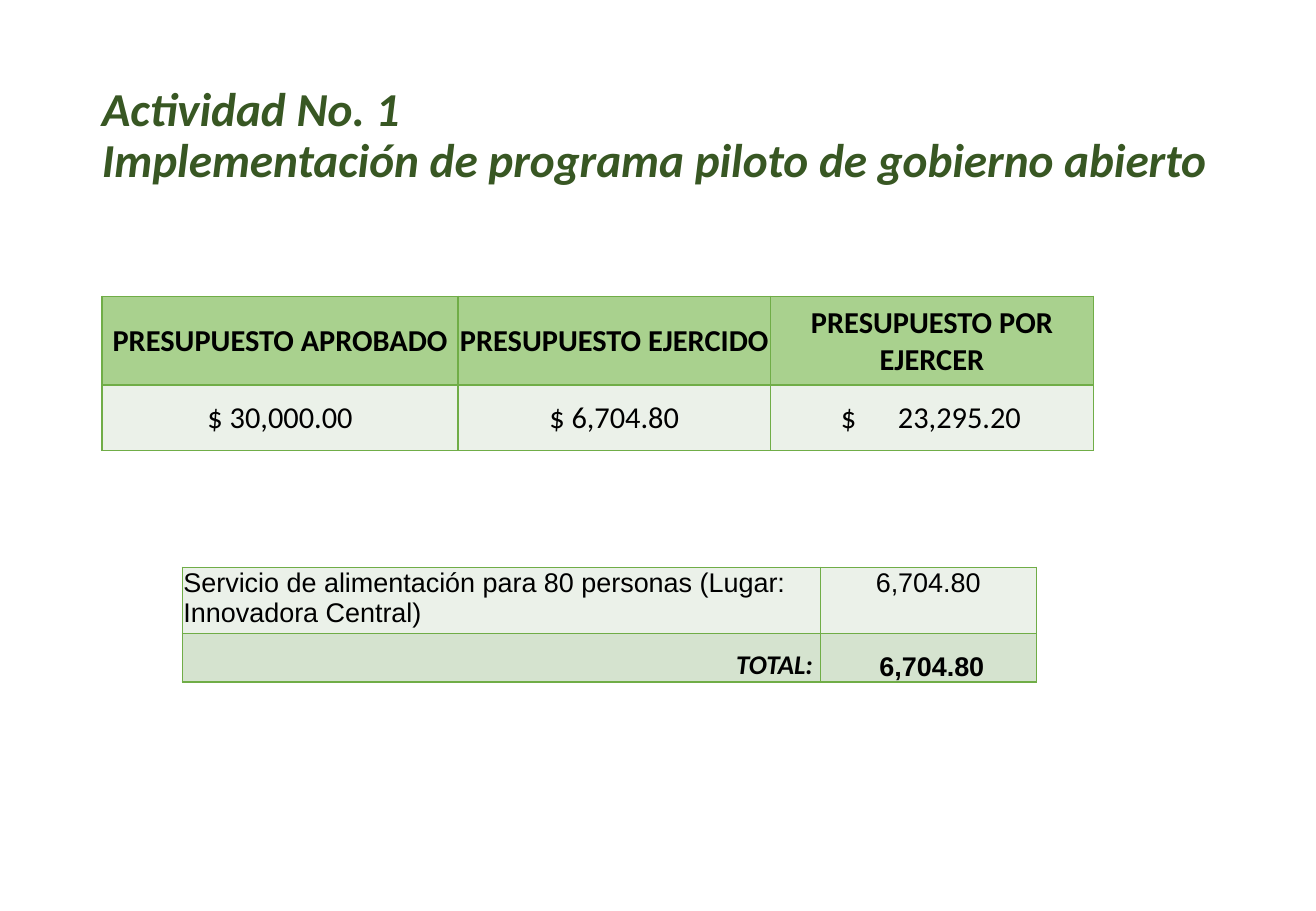
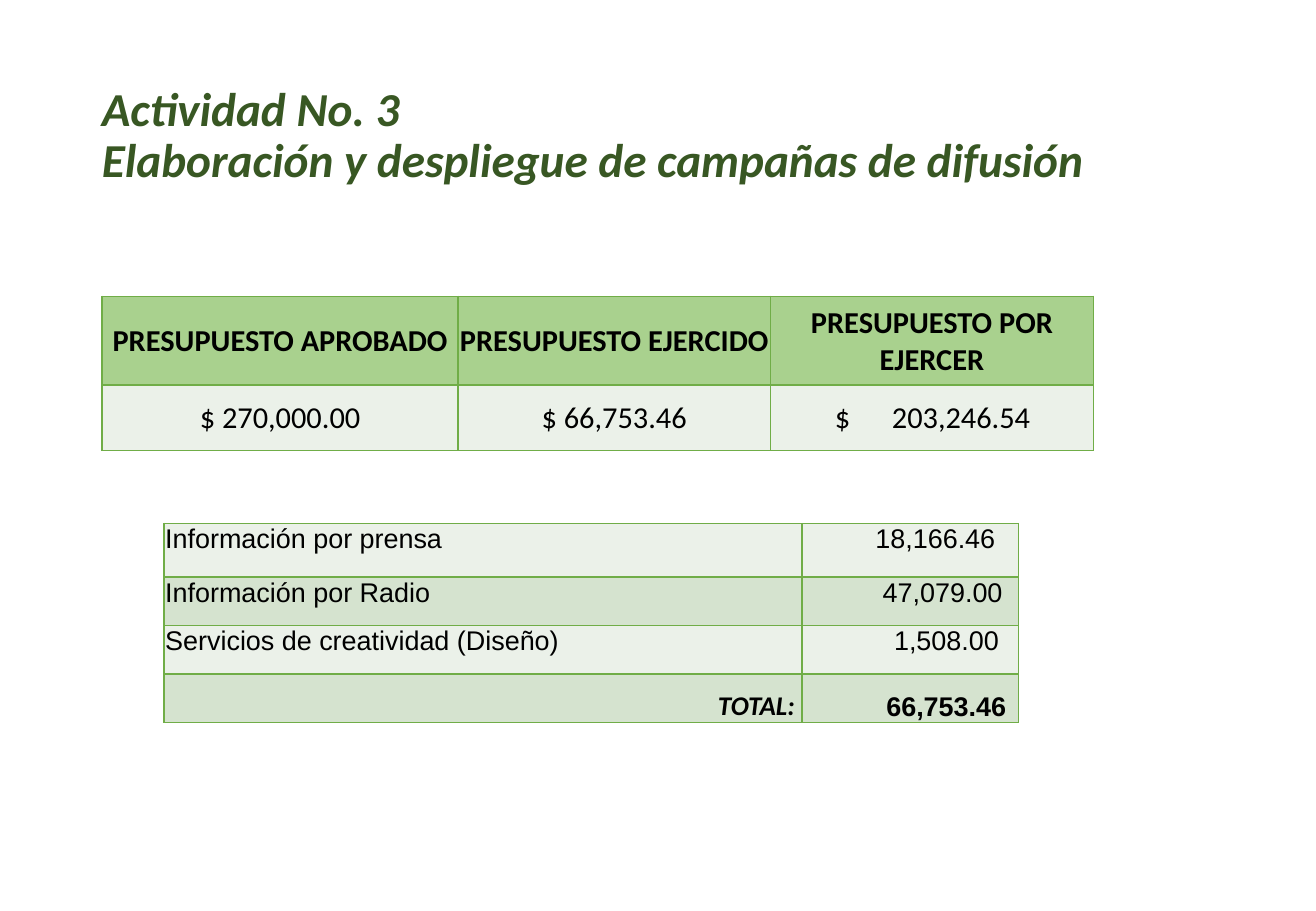
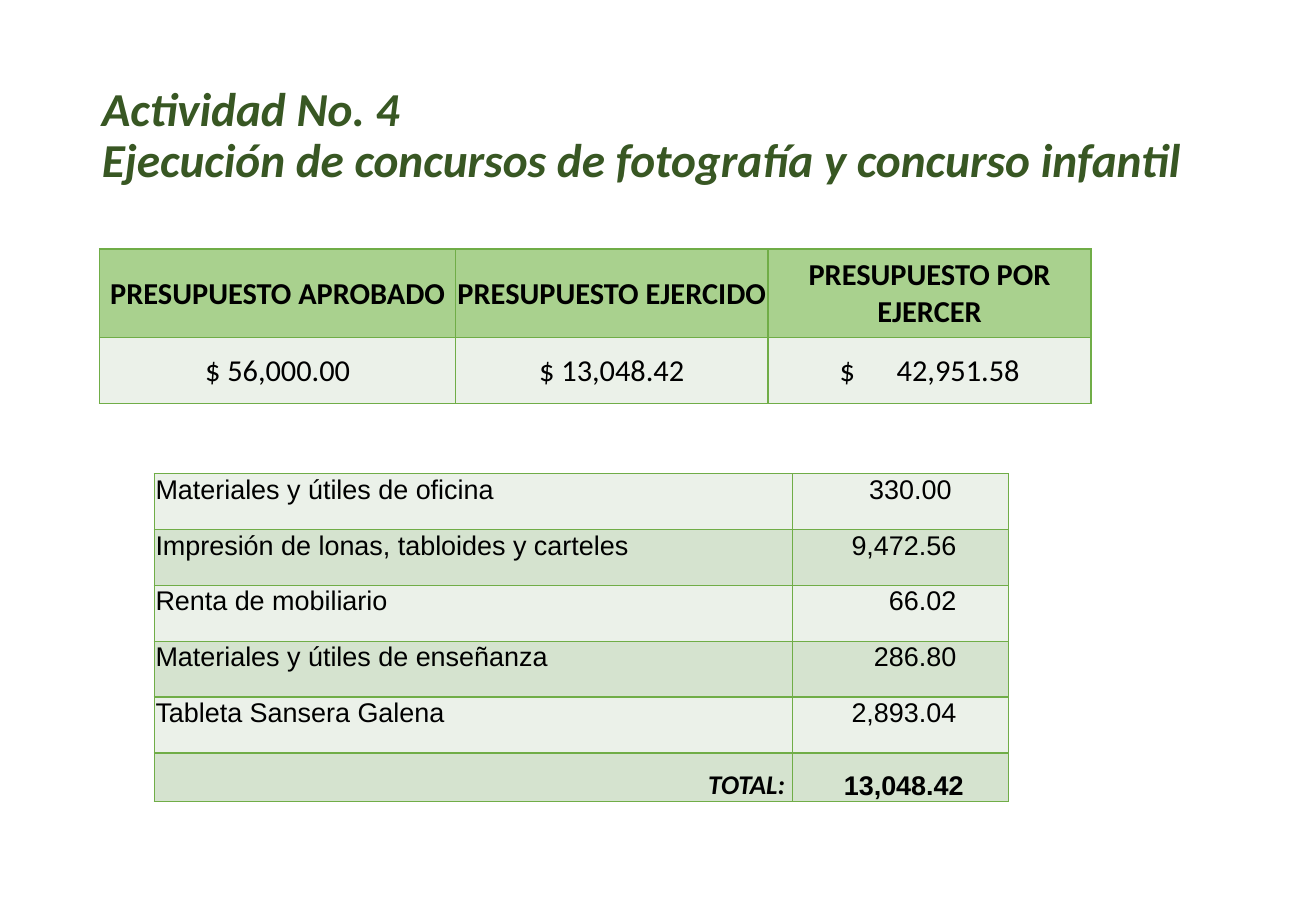
from lxml.etree import SubElement
from pptx import Presentation
from pptx.dml.color import RGBColor
from pptx.enum.text import MSO_ANCHOR as ANCHOR, PP_ALIGN as ALIGN
from pptx.oxml.ns import qn
from pptx.util import Emu, Pt

PX = 9144
COLORS = {
    "title": "385723",
    "text": "000000",
    "border": "70AD47",
    "header": "A9D18E",
    "light": "EBF1E9",
    "tinted": "D5E3CF",
}
INSET = 1
BUDGET_HEADERS = ["PRESUPUESTO APROBADO", "PRESUPUESTO EJERCIDO", "PRESUPUESTO POR EJERCER"]
BUDGET_COLUMNS = [293, 257, 266]
BUDGET_ROWS = [73, 54]
DETAIL_COLUMNS = [525, 178]
TOTAL_HEIGHT = 40
TOTAL_LABEL_MARGIN = 6
DOLLAR_TAB = 47

ACTIVITIES = [
    {
        "title": "Actividad No. 1\vImplementación de programa piloto de gobierno abierto",
        "budget_at": (84, 244),
        "budget": ["$ 30,000.00", "$ 6,704.80", "$\t23,295.20"],
        "dollar_margin": 58,
        "detail_at": (150, 467),
        "heights": [46],
        "detail": [
            ("Servicio de alimentación para 80 personas (Lugar: Innovadora Central)", "6,704.80", 46),
            ("TOTAL:", "6,704.80", 43),
        ],
    },
    {
        "title": "Actividad No. 3\vElaboración y despliegue de campañas de difusión",
        "budget_at": (84, 244),
        "budget": ["$ 270,000.00", "$ 66,753.46", "$\t203,246.54"],
        "dollar_margin": 53,
        "detail_at": (135, 431),
        "heights": [44, 40, 40],
        "detail": [
            ("Información por prensa", "18,166.46", 19),
            ("Información por Radio", "47,079.00", 13),
            ("Servicios de creatividad (Diseño)", "1,508.00", 16),
            ("TOTAL:", "66,753.46", 10),
        ],
    },
    {
        "title": "Actividad No. 4\vEjecución de concursos de fotografía y concurso infantil",
        "budget_at": (82, 205),
        "budget": ["$ 56,000.00", "$ 13,048.42", "$\t42,951.58"],
        "dollar_margin": 59,
        "detail_at": (127, 390),
        "heights": [46] * 5,
        "detail": [
            ("Materiales y útiles de oficina", "330.00", 47),
            ("Impresión de lonas, tabloides y carteles", "9,472.56", 43),
            ("Renta de mobiliario", "66.02", 43),
            ("Materiales y útiles de enseñanza", "286.80", 43),
            ("Tableta Sansera Galena", "2,893.04", 43),
            ("TOTAL:", "13,048.42", 37),
        ],
    },
]


def add_grid(page, at, widths, heights):
    box = [Emu(n * PX) for n in (*at, sum(widths), sum(heights))]
    table = page.shapes.add_table(len(heights), len(widths), *box).table
    table.first_row = table.horz_banding = False
    for column, width in zip(table.columns, widths):
        column.width = Emu(width * PX)
    for row, height in zip(table.rows, heights):
        row.height = Emu(height * PX)
    return table


def write_cell(cell, text, fill, size, font, align, anchor, bold=False, italic=False, left=INSET, right=INSET):
    properties = cell._tc.get_or_add_tcPr()
    for side in ("a:lnL", "a:lnR", "a:lnT", "a:lnB"):
        line = SubElement(properties, qn(side), w=str(Pt(1)))
        SubElement(SubElement(line, qn("a:solidFill")), qn("a:srgbClr"), val=COLORS["border"])
    cell.fill.solid()
    cell.fill.fore_color.rgb = RGBColor.from_string(COLORS[fill])
    cell.margin_left, cell.margin_right = Emu(left * PX), Emu(right * PX)
    cell.margin_top, cell.margin_bottom = Emu(INSET * PX), 0
    cell.vertical_anchor = anchor
    cell.text_frame.text = text
    para = cell.text_frame.paragraphs[0]
    para.alignment = align
    if "\t" in text:
        tabs = SubElement(para._p.get_or_add_pPr(), qn("a:tabLst"))
        SubElement(tabs, qn("a:tab"), pos=str(DOLLAR_TAB * PX), algn="l")
    for span in para.runs:
        span.font.size = Pt(size)
        span.font.name = font
        span.font.bold = bold
        span.font.italic = italic
        span.font.color.rgb = RGBColor.from_string(COLORS["text"])


deck = Presentation()
deck.slide_width, deck.slide_height = Emu(1083 * PX), Emu(750 * PX)

for activity in ACTIVITIES:
    page = deck.slides.add_slide(deck.slide_layouts[6])

    title = page.shapes.add_textbox(*[Emu(n * PX) for n in (74, 40, 934, 145)])
    title.text_frame.word_wrap = True
    title.text_frame.vertical_anchor = ANCHOR.MIDDLE
    title.text_frame.text = activity["title"]
    para = title.text_frame.paragraphs[0]
    para.line_spacing = 0.9
    for span in para.runs:
        span.font.size = Pt(28)
        span.font.name = "Calibri"
        span.font.bold = span.font.italic = True
        span.font.color.rgb = RGBColor.from_string(COLORS["title"])

    heights = activity["heights"] + [TOTAL_HEIGHT]
    detail = add_grid(page, activity["detail_at"], DETAIL_COLUMNS, heights)
    for index, (label, amount, margin) in enumerate(activity["detail"]):
        is_total = index == len(heights) - 1
        fill = "tinted" if index % 2 else "light"
        anchor = ANCHOR.BOTTOM if is_total else ANCHOR.TOP
        write_cell(detail.cell(index, 0), label, fill, 16,
                   "Calibri" if is_total else "Arial",
                   ALIGN.RIGHT if is_total else ALIGN.LEFT, anchor,
                   bold=is_total, italic=is_total,
                   right=TOTAL_LABEL_MARGIN if is_total else INSET)
        write_cell(detail.cell(index, 1), amount, fill, 16, "Arial",
                   ALIGN.RIGHT, anchor, bold=is_total, right=margin)

    budget = add_grid(page, activity["budget_at"], BUDGET_COLUMNS, BUDGET_ROWS)
    for index, (header, amount) in enumerate(zip(BUDGET_HEADERS, activity["budget"])):
        write_cell(budget.cell(0, index), header, "header", 18, "Calibri",
                   ALIGN.CENTER, ANCHOR.MIDDLE, bold=True)
        tabbed = "\t" in amount
        write_cell(budget.cell(1, index), amount, "light", 18, "Calibri",
                   ALIGN.LEFT if tabbed else ALIGN.CENTER, ANCHOR.MIDDLE,
                   left=activity["dollar_margin"] if tabbed else INSET)

deck.save("out.pptx")
